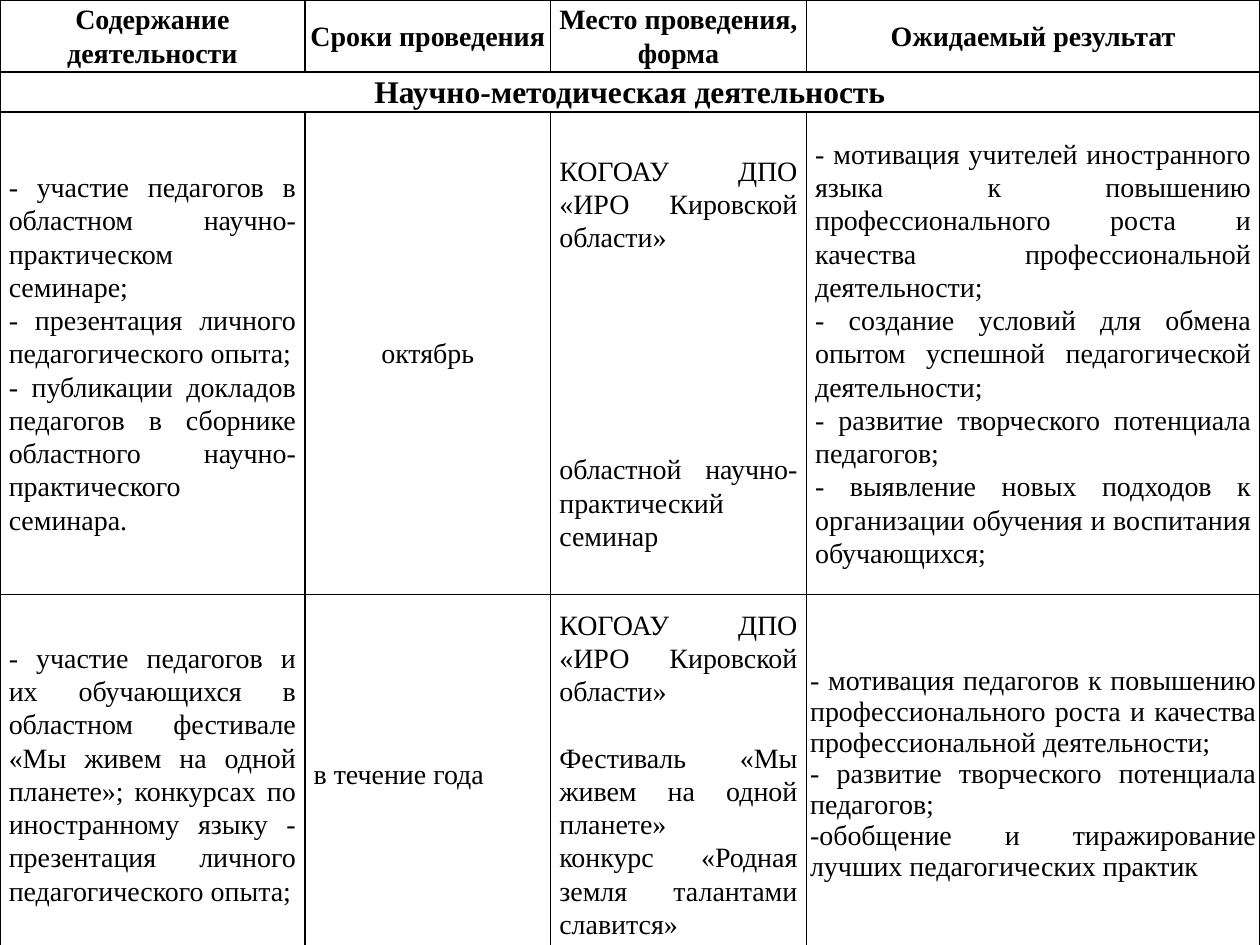
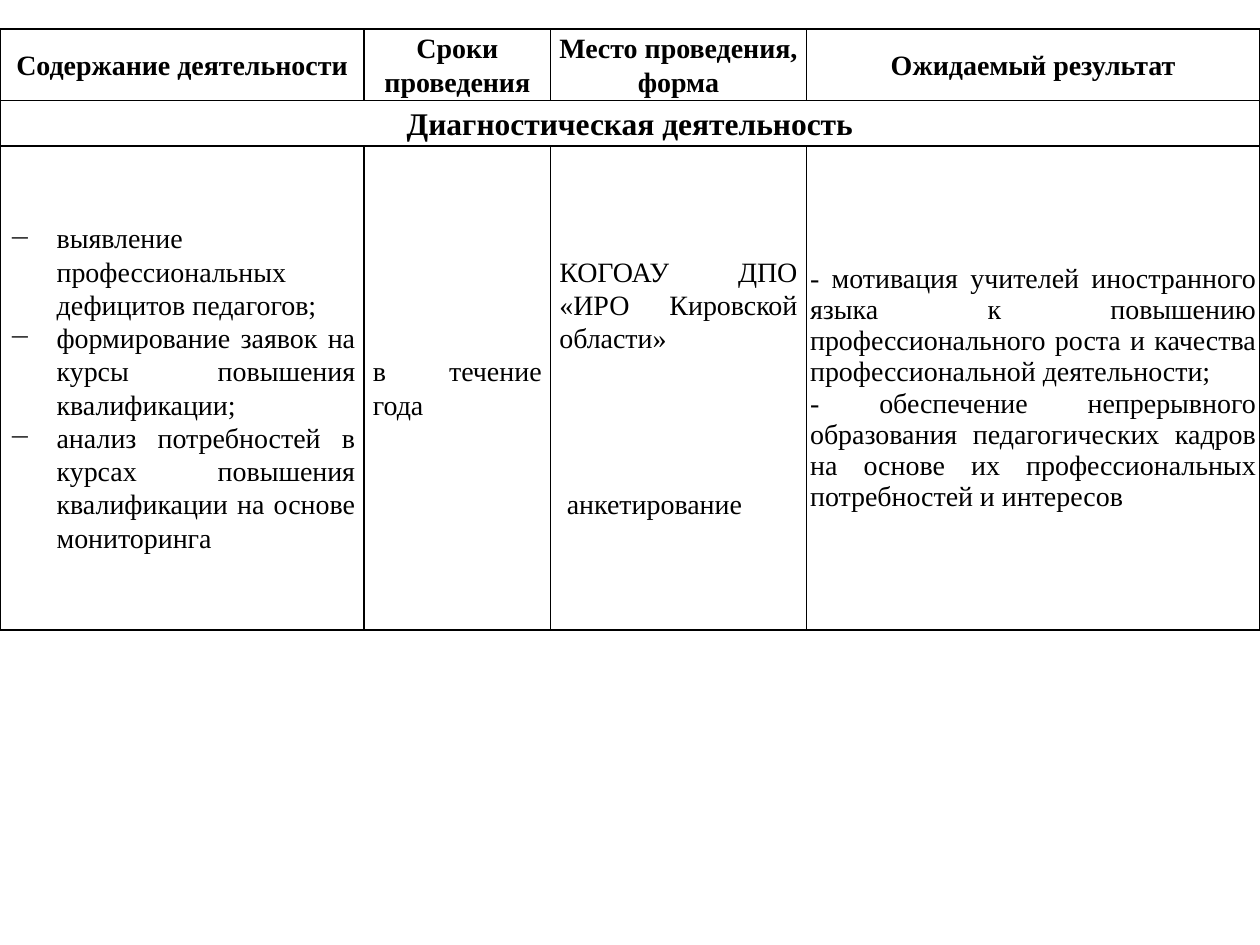
from lxml import etree
from pptx import Presentation
from pptx import util as u
from pptx.dml.color import RGBColor
from pptx.enum import text
from pptx.oxml import ns

COLORS = {"ink": "000000", "paper": "FFFFFF"}
FONT = "Times New Roman"
BODY_SIZE = 16
SPACING = 1.07
LINE_HEIGHT = BODY_SIZE * 1.107 * SPACING
WIDE, NARROW = 0.07, 0.03
CENTER, JUSTIFY = text.PP_ALIGN.CENTER, text.PP_ALIGN.JUSTIFY

HEADINGS = ["Содержание деятельности", "Сроки проведения",
            "Место проведения, форма", "Ожидаемый результат"]
VENUE = "КОГОАУ ДПО «ИРО Кировской области»"


def entry(*items, **format_options):
    return items, format_options


def item(wording, **format_options):
    return wording, format_options


METHODICAL = {
    "box": (0, 0, 10, 7.57),
    "columns": [2.42, 1.95, 2.03, 3.6],
    "rows": [0.57, 0.32, 3.83, 2.85],
    "section": "Научно-методическая деятельность",
    "entries": [
        [
            entry("- участие педагогов в областном научно-практическом семинаре;",
                  "- презентация личного педагогического опыта;",
                  "- публикации докладов педагогов в сборнике областного "
                  "научно-практического семинара."),
            entry("октябрь", align=CENTER),
            entry(VENUE, item("областной научно-практический семинар", lines_before=6)),
            entry("- мотивация учителей иностранного языка к повышению "
                  "профессионального роста и качества профессиональной деятельности;",
                  "- создание условий для обмена опытом успешной педагогической "
                  "деятельности;",
                  "- развитие творческого потенциала педагогов;",
                  "- выявление новых подходов к организации обучения и воспитания "
                  "обучающихся;"),
        ],
        [
            entry("- участие педагогов и их обучающихся в областном фестивале "
                  "«Мы живем на одной планете»; конкурсах по иностранному языку - "
                  "презентация личного педагогического опыта;"),
            entry("в течение года"),
            entry(VENUE, item("Фестиваль «Мы живем на одной планете»", lines_before=1),
                  "конкурс «Родная земля талантами славится»"),
            entry("- мотивация педагогов к повышению профессионального роста и "
                  "качества профессиональной деятельности;",
                  "- развитие творческого потенциала педагогов;",
                  "-обобщение и тиражирование лучших педагогических практик",
                  margin=NARROW, spacing=1.0),
        ],
    ],
}

DIAGNOSTIC = {
    "box": (0, 0.23, 10, 4.77),
    "columns": [2.89, 1.48, 2.03, 3.6],
    "rows": [0.57, 0.36, 3.84],
    "section": "Диагностическая деятельность",
    "entries": [
        [
            entry("выявление профессиональных дефицитов педагогов;",
                  "формирование заявок на курсы повышения квалификации;",
                  "анализ потребностей в курсах повышения квалификации на основе "
                  "мониторинга", bullet="−"),
            entry("в течение года"),
            entry(VENUE, item("анкетирование", lines_before=4, indent=0.06)),
            entry("- мотивация учителей иностранного языка к повышению "
                  "профессионального роста и качества профессиональной деятельности;",
                  "- обеспечение непрерывного образования педагогических кадров на "
                  "основе их профессиональных потребностей и интересов",
                  margin=NARROW, spacing=1.0),
        ],
    ],
}


def add_bullet(paragraph, character):
    properties = paragraph._p.get_or_add_pPr()
    properties.set("marL", str(u.Inches(0.38)))
    properties.set("indent", str(-u.Inches(0.38)))
    etree.SubElement(properties, ns.qn("a:buChar"), char=character)
    tabs = etree.SubElement(properties, ns.qn("a:tabLst"))
    etree.SubElement(tabs, ns.qn("a:tab"), pos=str(u.Inches(0.21)), algn="l")


def write_paragraph(paragraph, wording, size=BODY_SIZE, bold=False, align=JUSTIFY,
                    spacing=SPACING, lines_before=0, indent=0, bullet=None):
    if bullet:
        add_bullet(paragraph, bullet)
    if indent:
        paragraph._p.get_or_add_pPr().set("marL", str(u.Inches(indent)))
    paragraph.alignment = align
    paragraph.line_spacing = spacing
    if lines_before:
        paragraph.space_before = u.Pt(round(lines_before * LINE_HEIGHT, 1))
    run = paragraph.add_run()
    run.text = wording
    run.font.name = FONT
    run.font.size = u.Pt(size)
    run.font.bold = bold
    run.font.color.rgb = RGBColor.from_string(COLORS["ink"])


def add_borders(cell):
    properties = cell._tc.get_or_add_tcPr()
    for position, side in enumerate(("lnL", "lnR", "lnT", "lnB")):
        line = etree.Element(ns.qn(f"a:{side}"), w=str(u.Pt(1)))
        fill = etree.SubElement(line, ns.qn("a:solidFill"))
        etree.SubElement(fill, ns.qn("a:srgbClr"), val=COLORS["ink"])
        properties.insert(position, line)


def fill_cell(cell, items, margin=WIDE, **format_options):
    cell.vertical_anchor = text.MSO_ANCHOR.MIDDLE
    cell.margin_left = cell.margin_right = u.Inches(margin)
    cell.margin_top = cell.margin_bottom = 0
    frame = cell.text_frame
    for index, content in enumerate(items):
        paragraph = frame.add_paragraph() if index else frame.paragraphs[0]
        wording, own_options = (content, {}) if isinstance(content, str) else content
        write_paragraph(paragraph, wording, **{**format_options, **own_options})


def add_plan_table(slide, plan):
    shape = slide.shapes.add_table(len(plan["rows"]), len(plan["columns"]),
                                   *map(u.Inches, plan["box"]))
    table = shape.table
    table.first_row = table.horz_banding = False
    for column, width in zip(table.columns, plan["columns"]):
        column.width = u.Inches(width)
    for row, height in zip(table.rows, plan["rows"]):
        row.height = u.Inches(height)
    for cell in table.iter_cells():
        cell.fill.solid()
        cell.fill.fore_color.rgb = RGBColor.from_string(COLORS["paper"])
        add_borders(cell)

    heading_format = {"margin": NARROW, "bold": True, "align": CENTER}
    for column, heading in enumerate(HEADINGS):
        fill_cell(table.cell(0, column), [heading], **heading_format)
    section = table.cell(1, 0)
    section.merge(table.cell(1, len(HEADINGS) - 1))
    fill_cell(section, [plan["section"]], size=18, **heading_format)
    for row, entries in enumerate(plan["entries"], start=2):
        for column, (items, format_options) in enumerate(entries):
            fill_cell(table.cell(row, column), items, **format_options)


def main():
    presentation = Presentation()
    presentation.slide_width = u.Inches(10)
    presentation.slide_height = u.Inches(7.5)
    blank_layout = presentation.slide_layouts[6]
    for plan in (METHODICAL, DIAGNOSTIC):
        add_plan_table(presentation.slides.add_slide(blank_layout), plan)
    presentation.save("out.pptx")


if __name__ == "__main__":
    main()
